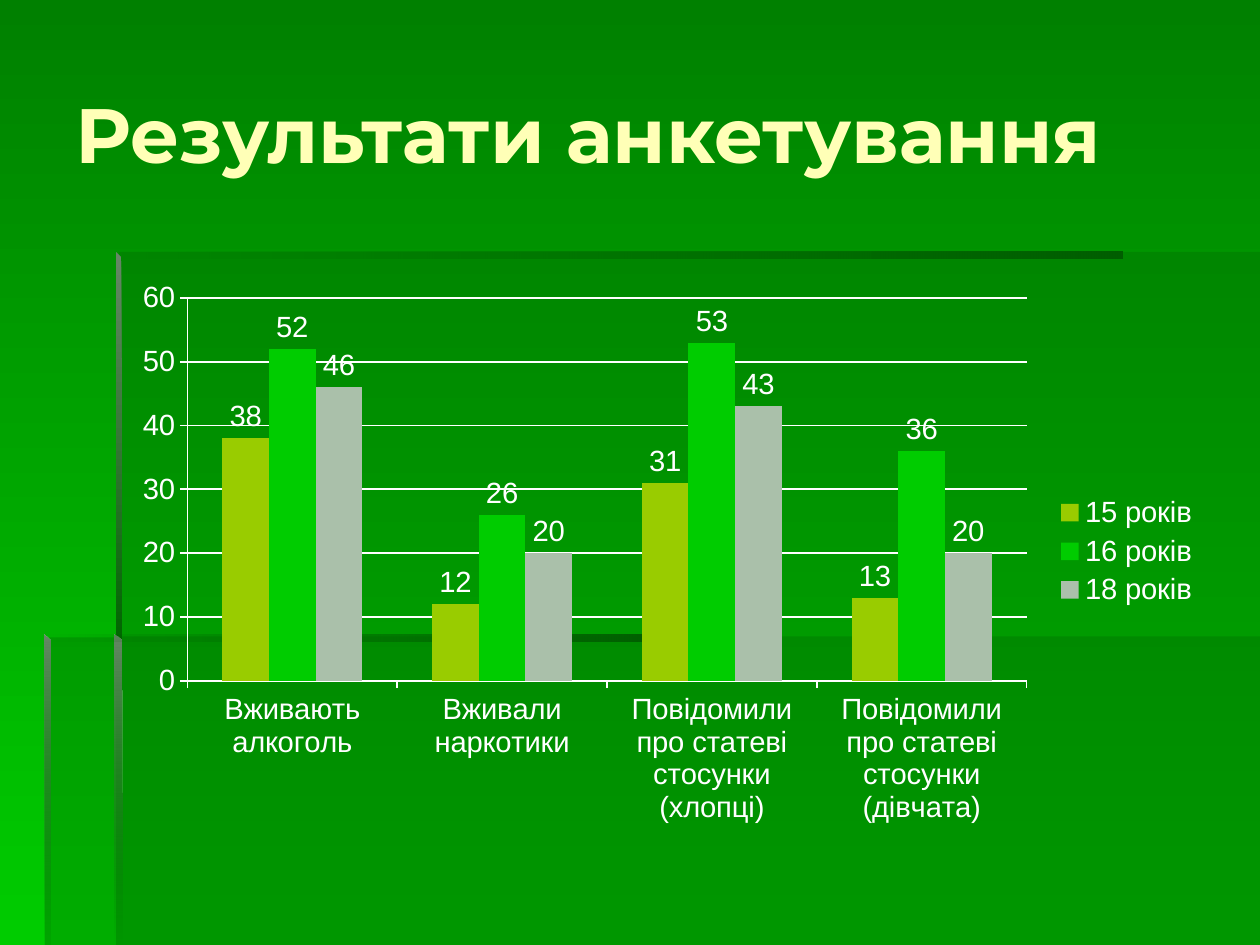
"""Builds the survey results slide with a clustered column chart."""
from dataclasses import dataclass

from lxml.etree import SubElement
from pptx import Presentation
from pptx.chart.data import CategoryChartData
from pptx.dml.color import RGBColor
from pptx.enum.chart import XL_CHART_TYPE, XL_LABEL_POSITION, XL_LEGEND_POSITION, XL_TICK_MARK
from pptx.enum.text import MSO_ANCHOR
from pptx.oxml.ns import qn
from pptx.util import Cm, Pt


@dataclass(frozen=True)
class Theme:
    sky: tuple = (("008000", 100), ("00CC00", 100))
    panel: tuple = (("006600", 30),)
    bar: tuple = (("006600", 0), ("005E00", 100))
    post: tuple = (("668666", 100), ("006600", 100))
    fading_post: tuple = (("668666", 100), ("006600", 0))
    faint_post: tuple = (("668666", 100), ("006600", 10))
    title: str = "FFFFB7"
    text: str = "FFFFFF"
    columns: tuple = ("99CC00", "00CC00", "AAC0AA")
    title_font: str = "Montserrat"
    chart_font: str = "Arial"
    title_size: float = 44
    chart_size: float = 16.7
    line: float = 1


def assign(obj, values):
    for name, value in values.items():
        setattr(obj, name, value)


class SlideBuilder:
    def __init__(self, s, theme):
        self.s, self.theme = s, theme

    def gradient(self, fill, colors, angle):
        fill.gradient()
        fill.gradient_angle = angle
        for stop, (color, _) in zip(fill.gradient_stops, colors):
            stop.color.rgb = RGBColor.from_string(color)

    def background(self):
        self.gradient(self.s.background.fill, self.theme.sky, 270)

    def outline(self, points, colors, angle=0):
        start, *rest = [(Cm(x), Cm(y)) for x, y in points]
        fb = self.s.shapes.build_freeform(*start)
        fb.add_line_segments(rest, close=True)
        sp = fb.convert_to_shape()
        sp.shadow.inherit = False
        sp.line.fill.background()
        if len(colors) == 1:
            sp.fill.solid()
            sp.fill.fore_color.rgb = RGBColor.from_string(colors[0][0])
        else:
            self.gradient(sp.fill, colors, angle)
        for clr, (_, opacity) in zip(sp.element.spPr.iter(qn("a:srgbClr")), colors):
            if opacity < 100:
                SubElement(clr, qn("a:alpha")).set("val", str(opacity * 1000))

    def font(self, font, color, **values):
        assign(font, values)
        font.color.rgb = RGBColor.from_string(color)

    def title(self, text, box):
        tf = self.s.shapes.add_textbox(*map(Cm, box)).text_frame
        assign(tf, {"word_wrap": True, "vertical_anchor": MSO_ANCHOR.MIDDLE})
        r = tf.paragraphs[0].add_run()
        r.text = text
        self.font(r.font, self.theme.title, name=self.theme.title_font,
                  size=Pt(self.theme.title_size), bold=True)

    def line(self, fmt):
        fmt.line.width = Pt(self.theme.line)
        fmt.line.color.rgb = RGBColor.from_string(self.theme.text)

    def column_chart(self, cats, series, box, plot_box):
        data = CategoryChartData()
        data.categories = cats
        for name, values in series.items():
            data.add_series(name, values)
        chart = self.s.shapes.add_chart(
            XL_CHART_TYPE.COLUMN_CLUSTERED, *map(Cm, box), data).chart
        assign(chart, {"has_title": False, "has_legend": True})
        assign(chart.legend, {"position": XL_LEGEND_POSITION.RIGHT, "include_in_layout": False})
        self.font(chart.font, self.theme.text, name=self.theme.chart_font,
                  size=Pt(self.theme.chart_size))
        for axis in (chart.category_axis, chart.value_axis):
            axis.major_tick_mark = XL_TICK_MARK.OUTSIDE
            self.line(axis.format)
        assign(chart.value_axis, {"minimum_scale": 0, "maximum_scale": 60,
                                  "major_unit": 10, "has_major_gridlines": True})
        self.line(chart.value_axis.major_gridlines.format)
        plot = chart.plots[0]
        assign(plot, {"gap_width": 150, "overlap": 0,
                      "vary_by_categories": False, "has_data_labels": True})
        assign(plot.data_labels, {"show_value": True, "position": XL_LABEL_POSITION.OUTSIDE_END})
        for ser, color in zip(plot.series, self.theme.columns):
            ser.format.fill.solid()
            ser.format.fill.fore_color.rgb = RGBColor.from_string(color)
        self.place_plot(chart, plot_box)

    def place_plot(self, chart, plot_box):
        area = chart.element.find(".//" + qn("c:plotArea"))
        for old in area.findall(qn("c:layout")):
            area.remove(old)
        layout = SubElement(area, qn("c:layout"))
        area.insert(0, layout)
        manual = SubElement(layout, qn("c:manualLayout"))
        values = {"layoutTarget": "inner", "xMode": "edge", "yMode": "edge",
                  **dict(zip("xywh", plot_box))}
        for tag, value in values.items():
            SubElement(manual, qn("c:" + tag)).set("val", str(value))


def main():
    prs = Presentation()
    assign(prs, {"slide_width": Cm(25.4), "slide_height": Cm(19.05)})
    theme = Theme()
    b = SlideBuilder(prs.slides.add_slide(prs.slide_layouts[6]), theme)
    right, bottom = 25.4, 19.05
    b.background()
    b.outline([(2.34, 12.83), (2.34, bottom), (right, bottom), (right, 12.83)], theme.panel)
    b.outline([(2.39, 12.85), (0.91, 12.85), (0.91, bottom), (right, bottom),
               (right, 5.08), (2.39, 5.08)], theme.panel)
    b.outline([(2.34, 5.08), (2.34, 5.21), (22.63, 5.21), (22.63, 5.08)], theme.bar)
    b.outline([(2.34, 5.08), (2.34, 12.95), (2.46, 12.95), (2.44, 5.18)], theme.post, 270)
    b.outline([(2.31, bottom), (2.46, bottom), (2.44, 12.9), (2.31, 12.8)],
              theme.fading_post, 270)
    b.outline([(0.89, 12.8), (0.89, 12.93), (13.59, 12.93), (13.59, 12.8)], theme.bar)
    b.outline([(0.89, 12.8), (0.89, bottom), (1.02, bottom), (1.02, 12.93)],
              theme.faint_post, 270)
    b.column_chart(
        ["Вживають алкоголь", "Вживали наркотики",
         "Повідомили про статеві стосунки (хлопці)",
         "Повідомили про статеві стосунки (дівчата)"],
        {"15 років": (38, 12, 31, 13),
         "16 років": (52, 26, 53, 36),
         "18 років": (46, 20, 43, 20)},
        (2.46, 5.44, 21.97, 11.35), (0.06, 0.05, 0.77, 0.68))
    b.title("Результати анкетування", (1.27, 0.69, 23.29, 3.99))
    prs.save("out.pptx")


if __name__ == "__main__":
    main()
